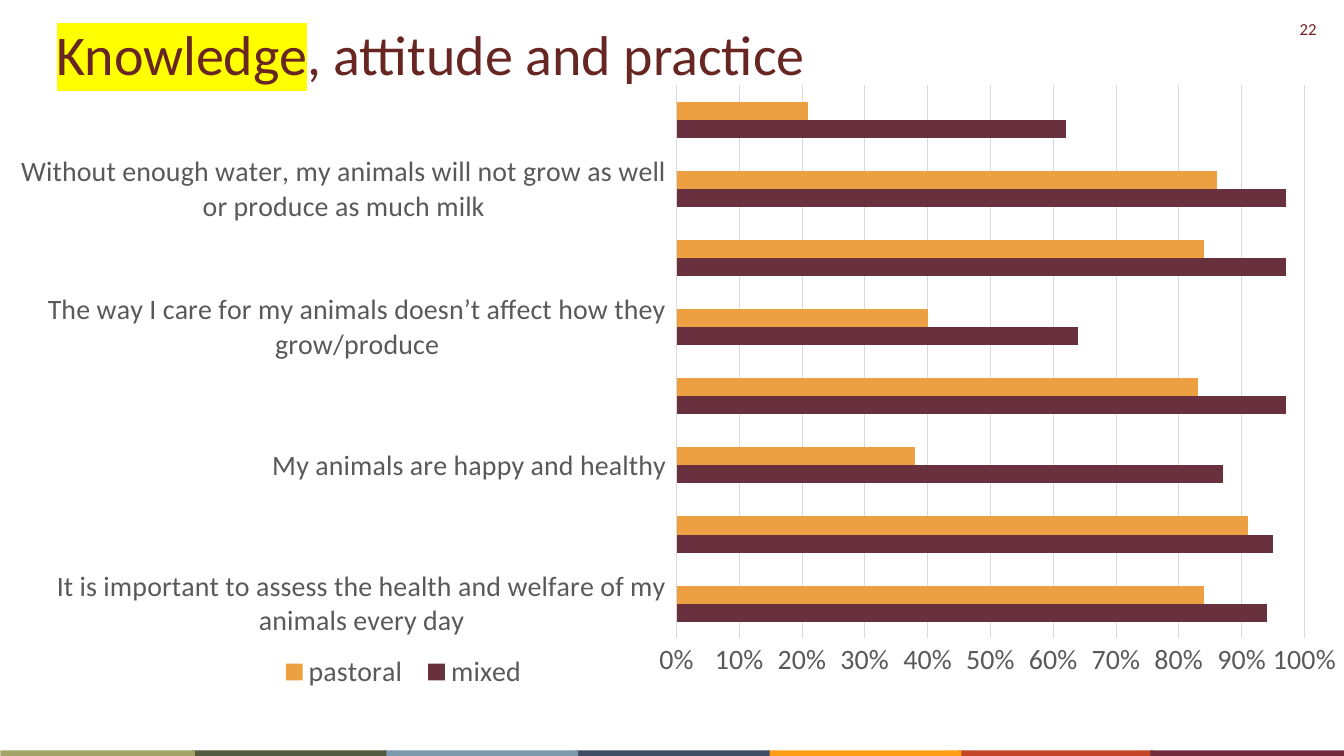
from pptx import Presentation
from pptx.chart.data import CategoryChartData
from pptx.dml.color import RGBColor
from pptx.enum.chart import XL_CHART_TYPE as ChartType
from pptx.enum.chart import XL_LEGEND_POSITION as LegendPosition
from pptx.enum.chart import XL_TICK_LABEL_POSITION as LabelPosition
from pptx.enum.chart import XL_TICK_MARK as TickMark
from pptx.enum.shapes import MSO_SHAPE as Shape
from pptx.enum.text import MSO_ANCHOR as Anchor
from pptx.enum.text import PP_ALIGN as Align
from pptx.oxml import parse_xml
from pptx.oxml.ns import nsdecls
from pptx.util import Cm, Pt


def format_font(font, size, color):
    for name, value in {"name": "Calibri", "size": Pt(size), "bold": False}.items():
        setattr(font, name, value)
    font.color.rgb = RGBColor.from_string(color)


def manual_layout(x, y, width, height, target=""):
    values = {"xMode": "edge", "yMode": "edge", "x": x, "y": y, "w": width, "h": height}
    items = "".join(f'<c:{tag} val="{value}"/>' for tag, value in values.items())
    return parse_xml(f'<c:layout {nsdecls("c")}><c:manualLayout>{target}{items}'
                     "</c:manualLayout></c:layout>")


presentation = Presentation()
presentation.slide_width, presentation.slide_height = Cm(33.87), Cm(19.05)
slide = presentation.slides.add_slide(presentation.slide_layouts[5])

# Slide number
number_box = slide.shapes.add_textbox(Cm(31.65), Cm(0.36), Cm(1.78), Cm(0.76))
number_box.text_frame.word_wrap = True
paragraph = number_box.text_frame.paragraphs[0]
paragraph.alignment = Align.RIGHT
run = paragraph.add_run()
run.text = "22"
format_font(run.font, 12, "762123")

# Colour strip along the bottom: position from the left, colour
strip = [(5, "C34628"), (6, "712C3D"), (4, "FF9E16"), (3, "404E65"),
         (2, "7C98AB"), (1, "53593E"), (0, "A3A467")]
for position, color in strip:
    shape = slide.shapes.add_shape(Shape.RECTANGLE, Cm(0.01 + 4.83 * position),
                                   Cm(18.91), Cm(4.9), Cm(0.15))
    shape.shadow.inherit = False
    shape.fill.solid()
    shape.fill.fore_color.rgb = RGBColor.from_string(color)
    shape.line.fill.background()

# Title with a highlighted first word
title = slide.shapes.title
title_format = {"left": Cm(1.17), "top": Cm(0.28), "width": Cm(30.12), "height": Cm(1.88)}
for name, value in title_format.items():
    setattr(title, name, value)
frame_format = {"vertical_anchor": Anchor.TOP, "margin_top": Cm(0.22),
                "margin_bottom": Cm(0), "word_wrap": True}
for name, value in frame_format.items():
    setattr(title.text_frame, name, value)
paragraph = title.text_frame.paragraphs[0]
paragraph.alignment = Align.LEFT
for text in ("Knowledge", ", attitude and practice"):
    run = paragraph.add_run()
    run.text = text
    format_font(run.font, 40, "682622")
highlight = parse_xml(f'<a:highlight {nsdecls("a")}><a:srgbClr val="FFFF00"/></a:highlight>')
paragraph.runs[0].font.fill  # the highlight follows the fill in the run properties
paragraph.runs[0]._r.xpath("a:rPr/a:solidFill")[0].addnext(highlight)

# Chart data, from the bottom category up
answers = [
    ("It is important to assess the health and welfare of my animals every day", 0.94, 0.84),
    ("Animals have feelings just like humans.", 0.95, 0.91),
    ("My animals are happy and healthy", 0.87, 0.38),
    ("Animals need to feel safe in my care if they are to be happy and healthy", 0.97, 0.83),
    ("The way I care for my animals doesn’t affect how they grow/produce", 0.64, 0.4),
    ("Untreated injuries are bad for the wellbeing and productivity of my animals", 0.97, 0.84),
    ("Without enough water, my animals will not grow as well or produce as much milk", 0.97, 0.86),
    ("Animals cannot suffer from physical pain", 0.62, 0.21),
]
statements, mixed, pastoral = zip(*answers)
chart_data = CategoryChartData(number_format="0%")
chart_data.categories = statements
chart_data.add_series("mixed", mixed)
chart_data.add_series("pastoral", pastoral)

# Bar chart
chart = slide.shapes.add_chart(ChartType.BAR_CLUSTERED, Cm(0.53), Cm(2.13),
                               Cm(34.04), Cm(15.42), chart_data).chart
chart.has_title = False
format_font(chart.font, 10, "000000")
plot = chart.plots[0]
plot.gap_width, plot.overlap, plot.vary_by_categories = 182, 0, False
for series, color in zip(plot.series, ("69303D", "ECA041")):
    series.format.fill.solid()
    series.format.fill.fore_color.rgb = RGBColor.from_string(color)

# Axes
category_axis, value_axis = chart.category_axis, chart.value_axis
for axis in (category_axis, value_axis):
    axis.major_tick_mark = axis.minor_tick_mark = TickMark.NONE
    format_font(axis.tick_labels.font, 20, "595959")
category_axis.tick_label_position = LabelPosition.LOW
value_format = {"minimum_scale": 0, "maximum_scale": 1, "major_unit": 0.1,
                "has_major_gridlines": True}
for name, value in value_format.items():
    setattr(value_axis, name, value)
value_axis.tick_labels.number_format = "0%"
value_axis.tick_labels.number_format_is_linked = False
value_axis.format.line.fill.background()
for line in (category_axis.format.line, value_axis.major_gridlines.format.line):
    line.color.rgb = RGBColor.from_string("D9D9D9")
    line.width = Pt(0.75)

# Legend and plot placement
chart.has_legend = True
chart.legend.position = LegendPosition.BOTTOM
chart.legend.include_in_layout = False
format_font(chart.legend.font, 20, "595959")
for layout in chart.element.xpath(".//c:plotArea/c:layout | .//c:legend/c:layout"):
    layout.getparent().remove(layout)
chart.element.xpath(".//c:legendPos")[0].addnext(manual_layout(0.18, 0.92, 0.2, 0.08))
chart.element.xpath(".//c:plotArea")[0].insert(
    0, manual_layout(0.483, 0, 0.467, 0.905, '<c:layoutTarget val="inner"/>'))

presentation.save("out.pptx")
